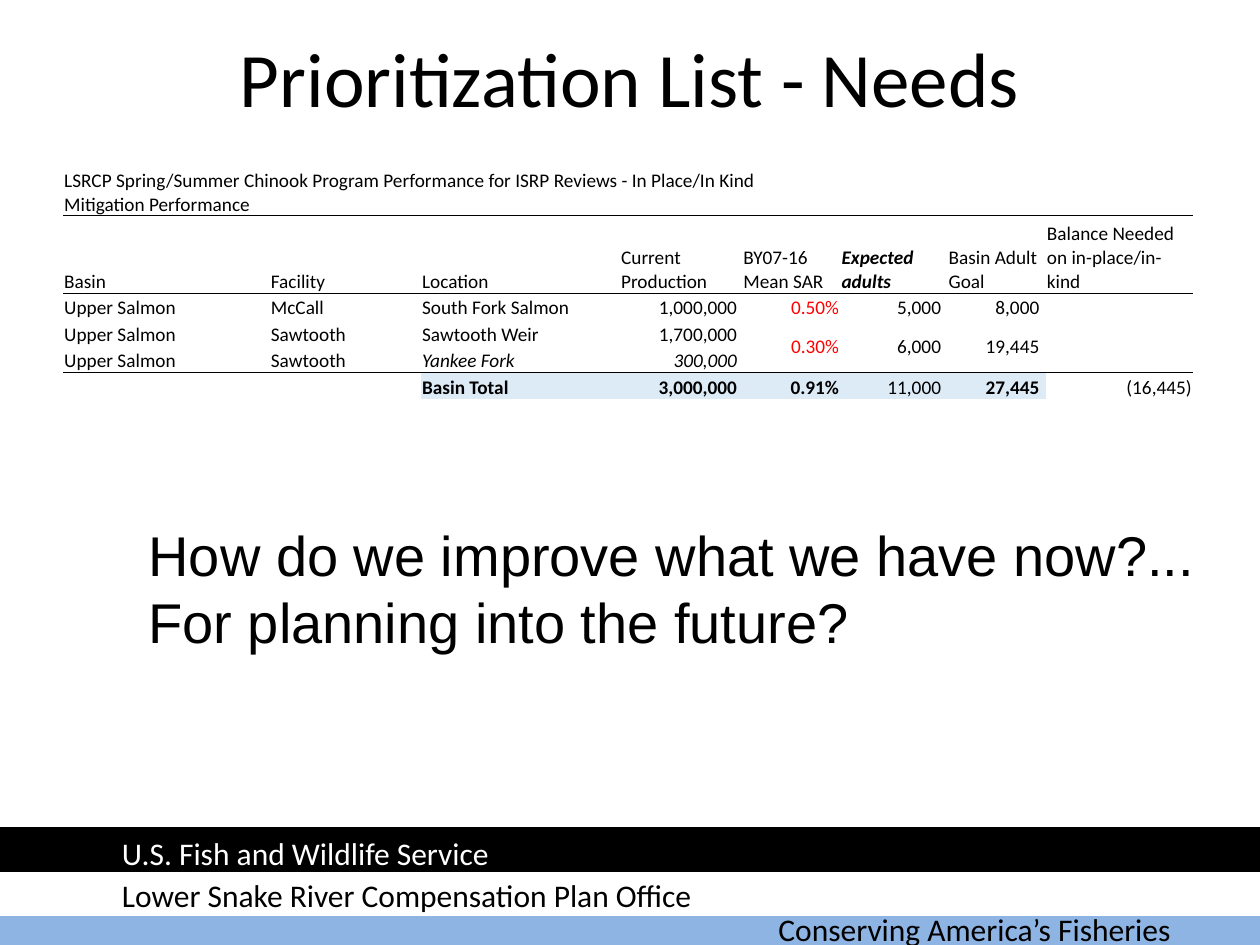
from lxml.etree import SubElement
from pptx import Presentation
from pptx.dml.color import RGBColor
from pptx.enum.shapes import MSO_SHAPE
from pptx.enum.text import MSO_ANCHOR, PP_ALIGN
from pptx.oxml.ns import qn
from pptx.util import Inches, Pt

COLORS = {"black": "000000", "white": "FFFFFF", "band": "8EB4E3",
          "total": "DDEBF7", "red": "FF0000"}
NO_GRID_STYLE = "{2D5ABB26-0587-4C30-8999-92F81FD0307C}"


def color(name):
    return RGBColor.from_string(COLORS[name])


def add_text(text, left, top, width, height, size, font="Calibri", fill="black"):
    box = slide.shapes.add_textbox(Inches(left), Inches(top), Inches(width), Inches(height))
    box.text_frame.word_wrap = True
    box.text_frame.text = text
    run = box.text_frame.paragraphs[0].runs[0]
    run.font.name, run.font.size = font, Pt(size)
    run.font.color.rgb = color(fill)
    return box.text_frame


presentation = Presentation()
presentation.slide_width, presentation.slide_height = Inches(10), Inches(7.5)
slide = presentation.slides.add_slide(presentation.slide_layouts[6])

# Footer bands and their captions
for left, top, fill in [(-0.01, 7.17, "band"), (0, 6.93, "white"), (0, 6.58, "black")]:
    band = slide.shapes.add_shape(MSO_SHAPE.RECTANGLE, Inches(left), Inches(top),
                                  Inches(10), Inches(0.33))
    band.shadow.inherit = False
    band.fill.solid()
    band.fill.fore_color.rgb = color(fill)
    band.line.color.rgb = color(fill)
    band.line.width = Pt(2)
add_text("Conserving America’s Fisheries", 6.08, 7.17, 3.67, 0.4, 18)
add_text("U.S. Fish and Wildlife Service", 0.87, 6.57, 4.16, 0.4, 18, fill="white")
add_text("Lower Snake River Compensation Plan Office", 0.87, 6.9, 4.97, 0.4, 18)

title = add_text("Prioritization List - Needs", 0.5, 0.17, 9, 0.87, 44)
title.vertical_anchor = MSO_ANCHOR.MIDDLE
title.paragraphs[0].alignment = PP_ALIGN.CENTER

# Performance table
column_widths = [1.64, 1.2, 1.58, 0.97, 0.78, 0.85, 0.78, 1.17]
row_heights = [0.38, 0.62, 0.21, 0.21, 0.21, 0.21]
rows = [
    ["LSRCP Spring/Summer Chinook Program Performance for ISRP Reviews"
     " - In Place/In Kind Mitigation Performance"] + [""] * 7,
    ["Basin", "Facility", "Location", "Current Production", "BY07-16 Mean SAR",
     "Expected adults", "Basin Adult Goal", "Balance Needed on in-place/in-kind"],
    ["Upper Salmon", "McCall", "South Fork Salmon", "1,000,000", "0.50%", "5,000", "8,000", ""],
    ["Upper Salmon", "Sawtooth", "Sawtooth Weir", "1,700,000", "0.30%", "6,000", "19,445", ""],
    ["Upper Salmon", "Sawtooth", "Yankee Fork", "300,000", "", "", "", ""],
    ["", "", "Basin Total", "3,000,000", "0.91%", "11,000", "27,445", "(16,445)"],
]
HEADER, POOLED, LAST_FACILITY, TOTAL = 1, 3, 4, 5
pooled_columns = (4, 5, 6)
right_margins = {3: 0.04, 5: 0.05, 6: 0.05}
bold_cells = {(HEADER, 5), (TOTAL, 2), (TOTAL, 3), (TOTAL, 4), (TOTAL, 6)}
italic_cells = {(HEADER, 5), (LAST_FACILITY, 2), (LAST_FACILITY, 3)}

frame = slide.shapes.add_table(len(rows), len(column_widths), Inches(0.5), Inches(1.33),
                               Inches(8.96), Inches(sum(row_heights)))
table = frame.table
table.first_row = table.horz_banding = False
table._tbl.tblPr.find(qn("a:tableStyleId")).text = NO_GRID_STYLE
for column, width in zip(table.columns, column_widths):
    column.width = Inches(width)
for row, height in zip(table.rows, row_heights):
    row.height = Inches(height)

table.cell(0, 0).merge(table.cell(0, 4))
for c in pooled_columns:
    table.cell(POOLED, c).merge(table.cell(LAST_FACILITY, c))

for r, values in enumerate(rows):
    for c, value in enumerate(values):
        cell = table.cell(r, c)
        pooled = r == POOLED and c in pooled_columns
        number = r > HEADER and c >= 3
        cell.margin_left = cell.margin_top = cell.margin_right = Inches(0.01)
        cell.margin_bottom = 0
        cell.vertical_anchor = MSO_ANCHOR.MIDDLE if pooled else MSO_ANCHOR.BOTTOM
        cell.text_frame.text = value
        paragraph = cell.text_frame.paragraphs[0]
        if value:
            font = paragraph.runs[0].font
            font.name, font.size = "Calibri", Pt(11)
            font.bold, font.italic = (r, c) in bold_cells, (r, c) in italic_cells
            font.color.rgb = color("red" if number and c == 4 and r != TOTAL else "black")
        else:
            SubElement(paragraph._p, qn("a:endParaRPr"), sz="1100")
        if number:
            paragraph.alignment = PP_ALIGN.RIGHT
            cell.margin_right = Inches(right_margins.get(c, 0.01))
        if r in (0, HEADER, LAST_FACILITY) or pooled:
            rule = SubElement(cell._tc.get_or_add_tcPr(), qn("a:lnB"), w=str(Pt(0.5)))
            SubElement(SubElement(rule, qn("a:solidFill")), qn("a:srgbClr"), val=COLORS["black"])
        if r == TOTAL and 2 <= c <= 6:
            cell.fill.solid()
            cell.fill.fore_color.rgb = color("total")
        else:
            cell.fill.background()

add_text("How do we improve what we have now?... For planning into the future?",
         1.08, 4.08, 8.58, 2.26, 32, font="Arial")

presentation.save("out.pptx")
